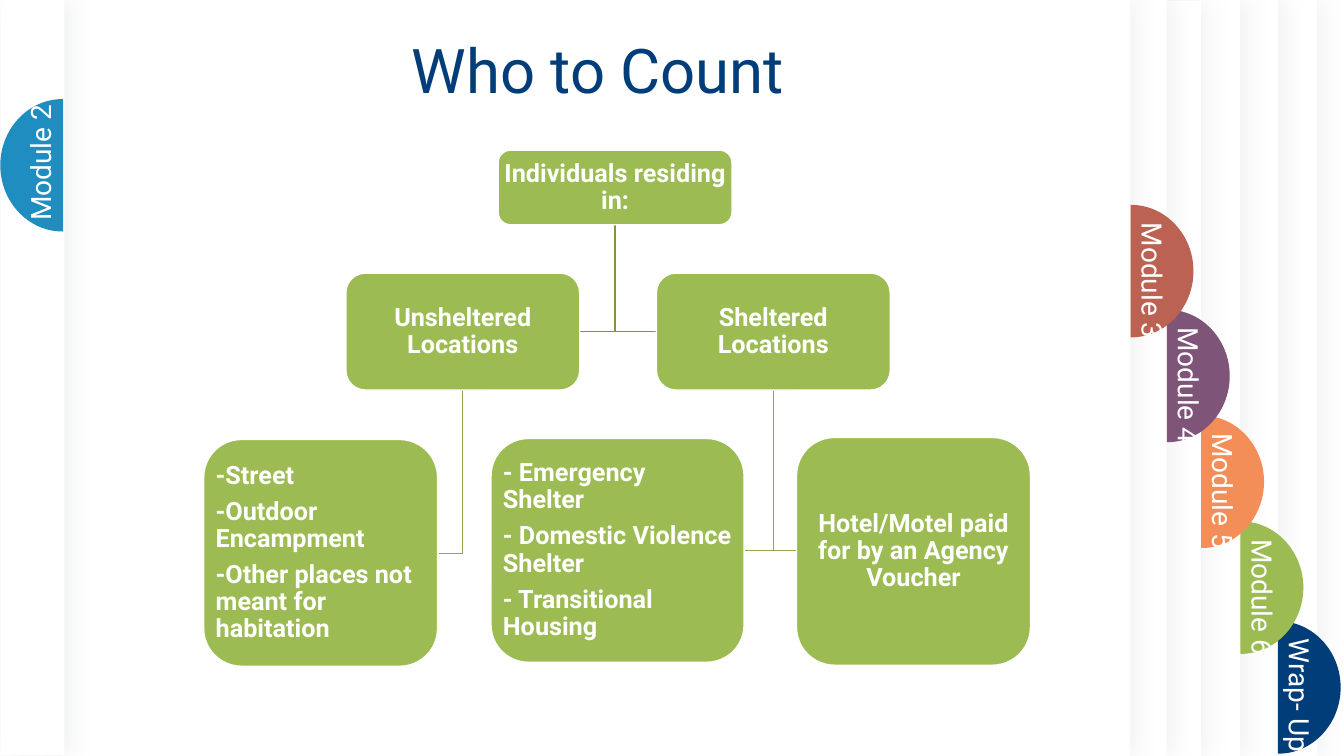
from lxml import etree
from pptx import Presentation
from pptx.dml.color import RGBColor
from pptx.enum.shapes import MSO_SHAPE
from pptx.enum.text import MSO_ANCHOR, PP_ALIGN
from pptx.oxml.ns import qn
from pptx.util import Inches, Pt

COLORS = {
    "white": "FFFFFF", "shade": "D3D5D6", "navy": "003D79", "blue": "1F8DBF",
    "red": "BB6253", "purple": "7E5479", "orange": "F48E58", "green": "9DBB53",
    "branch": "8EAA4B", "trunk": "7E9642",
}
TAB_WIDTH, TAB_HEIGHT = 0.61, 1.3
SHEET_WIDTH = 10.49
ARC_PULL = 0.55


def draw_outline(points, line, fill=None):
    start, *rest = [(Inches(x), Inches(y)) for x, y in points]
    builder = shapes.build_freeform(*start)
    builder.add_line_segments(rest, close=fill is not None)
    outline = builder.convert_to_shape()
    outline.shadow.inherit = False
    outline.line.color.rgb = RGBColor.from_string(COLORS[line])
    outline.line.width = Pt(1)
    if fill:
        outline.fill.solid()
        outline.fill.fore_color.rgb = RGBColor.from_string(COLORS[fill])
    else:
        outline.fill.background()
    return outline


def write(frame, lines, size, color="white", bold=False, frame_format=None, paragraph_format=None):
    frame.word_wrap = True
    for key, value in (frame_format or {}).items():
        setattr(frame, key, value)
    for index, line in enumerate(lines):
        paragraph = frame.add_paragraph() if index else frame.paragraphs[0]
        for key, value in (paragraph_format or {}).items():
            setattr(paragraph, key, value)
        run = paragraph.add_run()
        run.text = line
        font_format = {"name": "Roboto", "size": Pt(size), "bold": bold}
        for key, value in font_format.items():
            setattr(run.font, key, value)
        run.font.color.rgb = RGBColor.from_string(COLORS[color])


deck = Presentation()
deck.slide_width, deck.slide_height = Inches(13.33), Inches(7.5)
slide = deck.slides.add_slide(deck.slide_layouts[6])
shapes = slide.shapes

sheets = [(left, 0, SHEET_WIDTH) for left in (2.57, 2.19, 1.81)]
sheets += [(1.42, 0.01, SHEET_WIDTH), (1.08, 0, SHEET_WIDTH), (0.62, 0, 10.59), (0.01, -0.01, 0.63)]
for left, top, width in sheets:
    sheet = shapes.add_shape(MSO_SHAPE.RECTANGLE, Inches(left), Inches(top),
                             Inches(width), Inches(7.5))
    sheet.fill.solid()
    sheet.fill.fore_color.rgb = RGBColor.from_string(COLORS["white"])
    sheet.line.fill.background()
    sheet.shadow.inherit = False
    effects = sheet._element.spPr.find(qn("a:effectLst"))
    shadow = etree.SubElement(effects, qn("a:outerShdw"), blurRad=str(Pt(17)),
                              dist=str(Pt(3)), dir="0", algn="l", rotWithShape="0")
    shade = etree.SubElement(shadow, qn("a:srgbClr"), val=COLORS["shade"])
    etree.SubElement(shade, qn("a:alpha"), val="35000")

tabs = [
    ("Wrap- Up", "navy", 12.68, 6.17, 1),
    ("Module 6", "green", 12.31, 5.18, 1),
    ("Module 5", "orange", 11.92, 4.13, 1),
    ("Module 4", "purple", 11.58, 3.08, 1),
    ("Module 3", "red", 11.22, 2.04, 1),
    ("Module 2", "blue", 0.62, 0.99, -1),
]
for label, color, edge, top, side in tabs:
    middle, bottom = top + TAB_HEIGHT / 2, top + TAB_HEIGHT
    tip, pulled = edge + side * TAB_WIDTH, edge + side * TAB_WIDTH * ARC_PULL
    rise = TAB_HEIGHT / 2 * ARC_PULL
    tab = draw_outline([(edge, bottom), (edge, top), (tip, middle), (edge, bottom)], color, color)
    sides = list(tab._element.iter(qn("a:lnTo")))
    arcs = [
        [(pulled, top), (tip, middle - rise), (tip, middle)],
        [(tip, middle + rise), (pulled, bottom), (edge, bottom)],
    ]
    for straight, arc in zip(sides[1:3], arcs):
        curve = etree.Element(qn("a:cubicBezTo"))
        for x, y in arc:
            etree.SubElement(curve, qn("a:pt"), x=str(Inches(x) - tab.left),
                             y=str(Inches(y) - tab.top))
        straight.getparent().replace(straight, curve)
    for spare in sides[3:]:
        spare.getparent().remove(spare)

for label, color, edge, top, side in reversed(tabs):
    left, label_top = (edge - 0.11, top + 0.07) if side > 0 else (0.18, 0.69)
    tab_label = shapes.add_textbox(Inches(left), Inches(label_top), Inches(0.54), Inches(1.6))
    tab_label.rotation = 0 if side > 0 else 180
    tab_label.text_frame._txBody.bodyPr.set("vert", "vert")
    write(tab_label.text_frame, [label], 20)

title = shapes.add_textbox(Inches(0.64), 0, Inches(10.58), Inches(1.45))
write(title.text_frame, ["Who to Count"], 44, "navy",
      frame_format={"vertical_anchor": MSO_ANCHOR.MIDDLE},
      paragraph_format={"alignment": PP_ALIGN.CENTER, "line_spacing": 0.9})

branches = [
    (7.67, 3.87, 5.46, 7.9, "branch"),
    (7.67, 3.87, 5.46, 7.39, "branch"),
    (6.1, 2.22, 3.29, 6.51, "trunk"),
    (4.59, 3.87, 5.49, 4.35, "branch"),
    (6.1, 2.22, 3.29, 5.75, "trunk"),
]
for x, top, bottom, end, color in branches:
    draw_outline([(x, top), (x, bottom), (end, bottom)], color)

nodes = [
    (4.94, 1.49, 2.32, 0.74, PP_ALIGN.CENTER, ["Individuals residing in:"]),
    (3.43, 2.71, 2.32, 1.16, PP_ALIGN.CENTER, ["Unsheltered Locations"]),
    (2.02, 4.36, 2.32, 2.25, PP_ALIGN.LEFT,
     ["-Street", "-Outdoor Encampment", "-Other places not meant for habitation"]),
    (6.51, 2.71, 2.32, 1.16, PP_ALIGN.CENTER, ["Sheltered Locations"]),
    (4.87, 4.35, 2.51, 2.22, PP_ALIGN.LEFT,
     ["- Emergency Shelter", "- Domestic Violence Shelter", "- Transitional Housing"]),
    (7.9, 4.34, 2.32, 2.26, PP_ALIGN.CENTER, ["Hotel/Motel paid for by an Agency Voucher"]),
]
node_frame = {"vertical_anchor": MSO_ANCHOR.MIDDLE}
for edge in ("left", "top", "right", "bottom"):
    node_frame[f"margin_{edge}"] = Inches(0.01)
for left, top, width, height, alignment, lines in nodes:
    node = shapes.add_shape(MSO_SHAPE.ROUNDED_RECTANGLE, Inches(left), Inches(top),
                            Inches(width), Inches(height))
    node.shadow.inherit = False
    node.fill.solid()
    node.fill.fore_color.rgb = RGBColor.from_string(COLORS["green"])
    node.line.color.rgb = RGBColor.from_string(COLORS["white"])
    node.line.width = Pt(1)
    write(node.text_frame, lines, 18, bold=True, frame_format=node_frame,
          paragraph_format={"alignment": alignment, "line_spacing": 0.9, "space_after": Pt(6.3)})

deck.save("out.pptx")
